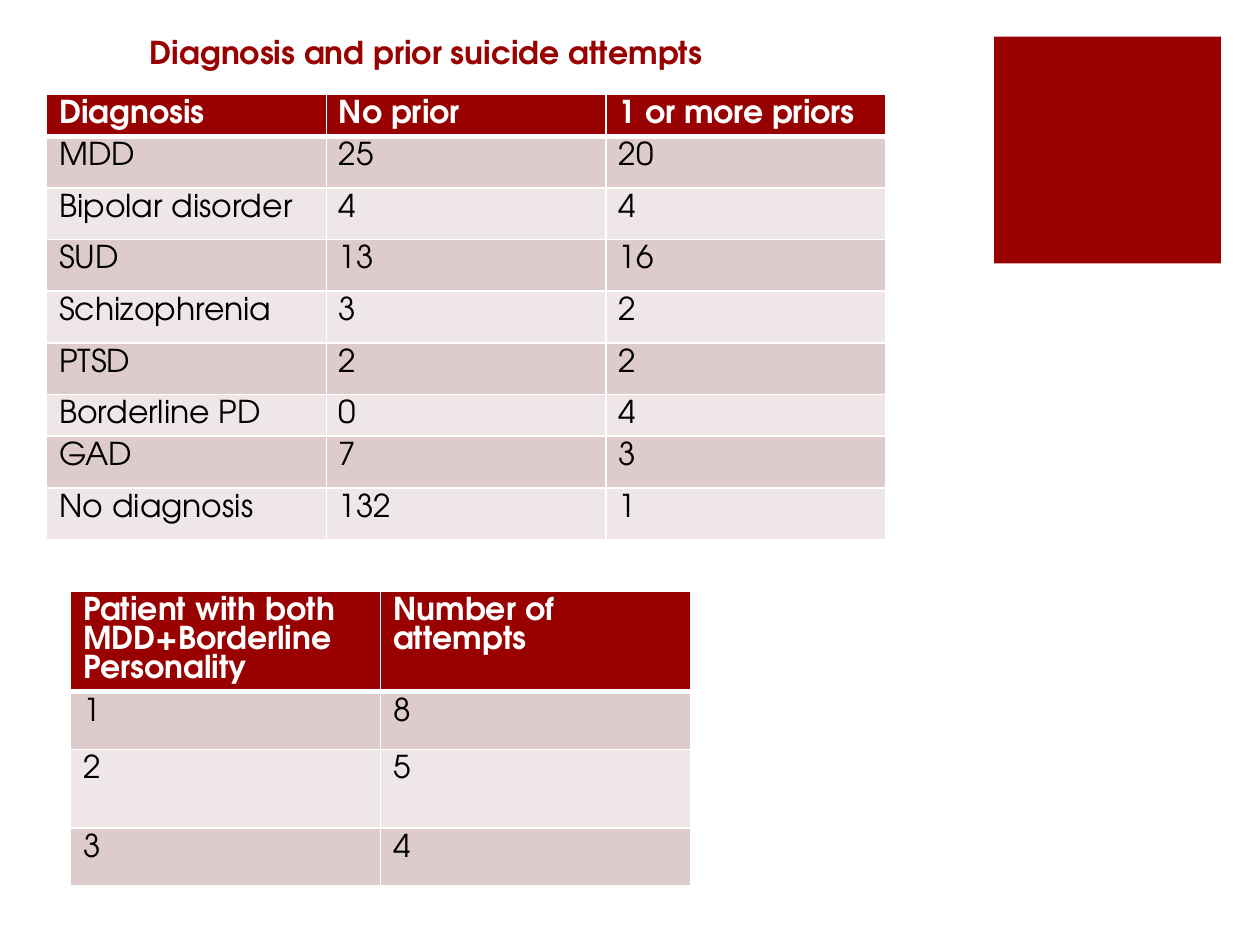
from dataclasses import dataclass

from lxml.etree import SubElement
from pptx import Presentation
from pptx.dml.color import RGBColor
from pptx.enum.shapes import MSO_SHAPE
from pptx.oxml.ns import qn
from pptx.slide import Slide
from pptx.text.text import _Paragraph as Paragraph
from pptx.util import Inches, Pt

DARK_RED = RGBColor(0x99, 0x00, 0x00)
ROSE = RGBColor(0xDE, 0xCC, 0xCC)
PALE_ROSE = RGBColor(0xEF, 0xE7, 0xE7)
WHITE = RGBColor(0xFF, 0xFF, 0xFF)
BLACK = RGBColor(0x00, 0x00, 0x00)
FONT = "TeX Gyre Adventor"
LINE_SPACING = Pt(16.6)


@dataclass(frozen=True)
class TableContent:
    left: float
    top: float
    column_width: float
    row_heights: list[float]
    rows: list[list[str]]


ATTEMPTS = TableContent(
    0.56, 4.69, 2.46, [0.8, 0.46, 0.62, 0.46],
    [
        ["Patient with both MDD+Borderline Personality", "Number of attempts"],
        ["1", "8"],
        ["2", "5"],
        ["3", "4"],
    ],
)
DIAGNOSES = TableContent(
    0.37, 0.75, 2.22, [0.33] + [0.41] * 5 + [0.33] + [0.41] * 2,
    [
        ["Diagnosis", "No prior", "1 or more priors"],
        ["MDD", "25", "20"],
        ["Bipolar disorder", "4", "4"],
        ["SUD", "13", "16"],
        ["Schizophrenia", "3", "2"],
        ["PTSD", "2", "2"],
        ["Borderline PD", "0", "4"],
        ["GAD", "7", "3"],
        ["No diagnosis", "132", "1"],
    ],
)


def format_runs(paragraph: Paragraph, color: RGBColor, bold: bool) -> None:
    for run in paragraph.runs:
        run.font.name = FONT
        run.font.size = Pt(18)
        run.font.bold = bold
        run.font.color.rgb = color


def set_borders(cell, widths: dict[str, int]) -> None:
    properties = cell._tc.get_or_add_tcPr()
    for index, (side, width) in enumerate(widths.items()):
        line = properties.makeelement(qn(f"a:{side}"), {"w": str(Pt(width))})
        fill = SubElement(line, qn("a:solidFill"))
        SubElement(fill, qn("a:srgbClr"), val=str(WHITE))
        properties.insert(index, line)


def draw_table(slide: Slide, content: TableContent) -> None:
    column_count = len(content.rows[0])
    table = slide.shapes.add_table(
        len(content.rows), column_count,
        Inches(content.left), Inches(content.top),
        Inches(content.column_width * column_count),
        Inches(sum(content.row_heights)),
    ).table
    for column in table.columns:
        column.width = Inches(content.column_width)
    for row_index, texts in enumerate(content.rows):
        table.rows[row_index].height = Inches(content.row_heights[row_index])
        is_header = row_index == 0
        band = ROSE if row_index % 2 else PALE_ROSE
        for column_index, text in enumerate(texts):
            cell = table.cell(row_index, column_index)
            cell.fill.solid()
            cell.fill.fore_color.rgb = DARK_RED if is_header else band
            cell.text_frame.text = text
            paragraph = cell.text_frame.paragraphs[0]
            paragraph.line_spacing = LINE_SPACING
            format_runs(paragraph, WHITE if is_header else BLACK, is_header)
            set_borders(cell, {
                "lnL": 1,
                "lnR": 1,
                "lnT": 3 if row_index == 1 else 1,
                "lnB": 3 if is_header else 1,
            })


def draw_accent_square(slide: Slide) -> None:
    square = slide.shapes.add_shape(
        MSO_SHAPE.RECTANGLE, Inches(7.89), Inches(0.29), Inches(1.8), Inches(1.8)
    )
    square.shadow.inherit = False
    square.fill.solid()
    square.fill.fore_color.rgb = DARK_RED
    square.line.fill.background()


def draw_title(slide: Slide) -> None:
    title = slide.shapes.add_textbox(
        Inches(0.75), Inches(0.21), Inches(6.28), Inches(0.4)
    )
    text_frame = title.text_frame
    text_frame.word_wrap = True
    text_frame.margin_left = Inches(0.44)
    text_frame.text = "Diagnosis and prior suicide attempts"
    format_runs(text_frame.paragraphs[0], DARK_RED, True)


def main() -> None:
    presentation = Presentation()
    presentation.slide_width = Inches(10)
    presentation.slide_height = Inches(7.5)
    slide = presentation.slides.add_slide(presentation.slide_layouts[6])
    draw_accent_square(slide)
    for content in (ATTEMPTS, DIAGNOSES):
        draw_table(slide, content)
    draw_title(slide)
    presentation.save("out.pptx")


if __name__ == "__main__":
    main()
